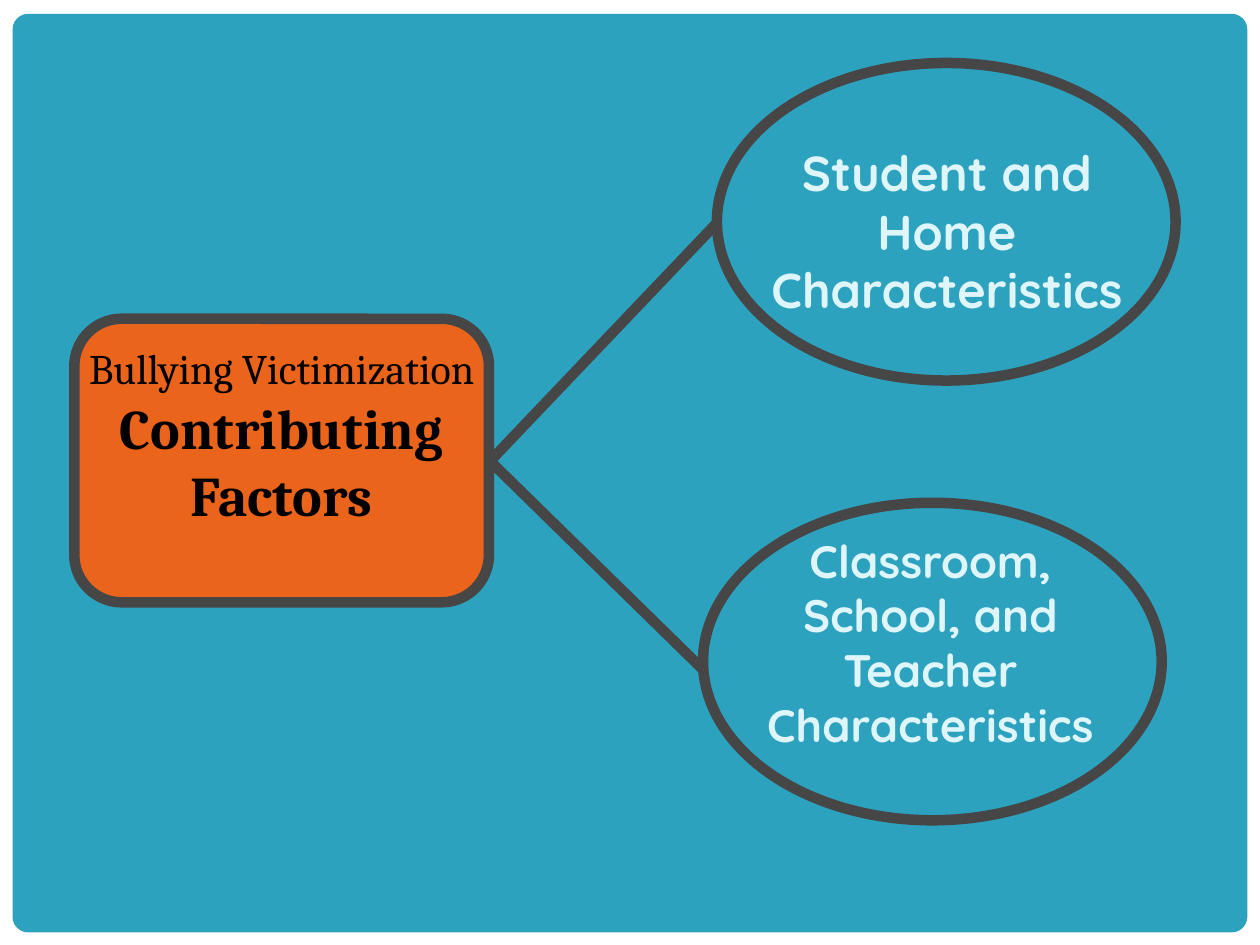
from dataclasses import dataclass

from lxml import etree
from pptx import Presentation
from pptx import util as u
from pptx.dml.color import RGBColor
from pptx.enum import shapes, text
from pptx.oxml import ns


@dataclass(frozen=True)
class Theme:
    page: str = "FFFFFF"
    panel: str = "2DA2BF"
    accent: str = "EB641B"
    outline: str = "464646"
    dark: str = "000000"
    light: str = "DEF5FA"
    serif: str = "Cambria"
    rounded: str = "Quicksand"
    lead_size: int = 24
    title_size: int = 32
    student_size: int = 28
    school_size: int = 26
    line_width: int = 6


theme = Theme()


def add_text(paragraph, content, *, font, size, color, bold=False):
    paragraph.alignment = text.PP_ALIGN.CENTER
    run = paragraph.add_run()
    run.text = content
    run.font.name = font
    run.font.size = u.Pt(size)
    run.font.bold = bold
    run.font.color.rgb = RGBColor.from_string(color)


def style_line(line):
    line.color.rgb = RGBColor.from_string(theme.outline)
    line.width = u.Pt(theme.line_width)


presentation = Presentation()
presentation.slide_width = u.Inches(10)
presentation.slide_height = u.Inches(7.5)
slide = presentation.slides.add_slide(presentation.slide_layouts[5])
slide.background.fill.solid()
slide.background.fill.fore_color.rgb = RGBColor.from_string(theme.page)

panel = slide.shapes.add_shape(
    shapes.MSO_SHAPE.ROUNDED_RECTANGLE,
    u.Inches(0.1), u.Inches(0.11), u.Inches(9.8), u.Inches(7.29),
)
panel.adjustments[0] = 0.017
panel.shadow.inherit = False
panel.fill.solid()
panel.fill.fore_color.rgb = RGBColor.from_string(theme.panel)
panel.line.fill.background()

for start, end in [((6.08, 1.36), (3.88, 3.67)), ((3.9, 3.67), (5.8, 5.53))]:
    connector = slide.shapes.add_connector(
        shapes.MSO_CONNECTOR.STRAIGHT, *[u.Inches(value) for value in start + end]
    )
    style_line(connector.line)
    etree.SubElement(connector._element.spPr, ns.qn("a:effectLst"))

nodes = [
    (shapes.MSO_SHAPE.ROUNDED_RECTANGLE, (0.59, 2.53, 3.29, 2.25), theme.accent),
    (shapes.MSO_SHAPE.OVAL, (5.69, 0.5, 3.64, 2.52), theme.panel),
    (shapes.MSO_SHAPE.OVAL, (5.58, 3.99, 3.64, 2.52), theme.panel),
]
for preset, box, color in nodes:
    node = slide.shapes.add_shape(preset, *[u.Inches(value) for value in box])
    node.shadow.inherit = False
    node.fill.solid()
    node.fill.fore_color.rgb = RGBColor.from_string(color)
    style_line(node.line)

title = slide.shapes.title
slide.shapes._spTree.append(title._element)
title.left, title.top = u.Inches(0.59), u.Inches(2.67)
title.width, title.height = u.Inches(3.29), u.Inches(1.99)
frame = title.text_frame
frame.word_wrap = True
frame.auto_size = text.MSO_AUTO_SIZE.SHAPE_TO_FIT_TEXT
frame.vertical_anchor = text.MSO_ANCHOR.TOP
add_text(frame.paragraphs[0], "Bullying Victimization",
         font=theme.serif, size=theme.lead_size, color=theme.dark)
add_text(frame.add_paragraph(), "Contributing Factors",
         font=theme.serif, size=theme.title_size, color=theme.dark, bold=True)

labels = [
    ("Student and Home Characteristics", (5.8, 1.08, 3.43, 1.51), theme.student_size),
    ("Classroom, School, and Teacher Characteristics", (5.69, 4.18, 3.39, 1.85), theme.school_size),
]
for content, box, size in labels:
    label = slide.shapes.add_textbox(*[u.Inches(value) for value in box])
    label.text_frame.word_wrap = True
    label.text_frame.auto_size = text.MSO_AUTO_SIZE.SHAPE_TO_FIT_TEXT
    add_text(label.text_frame.paragraphs[0], content,
             font=theme.rounded, size=size, color=theme.light, bold=True)

presentation.save("out.pptx")
